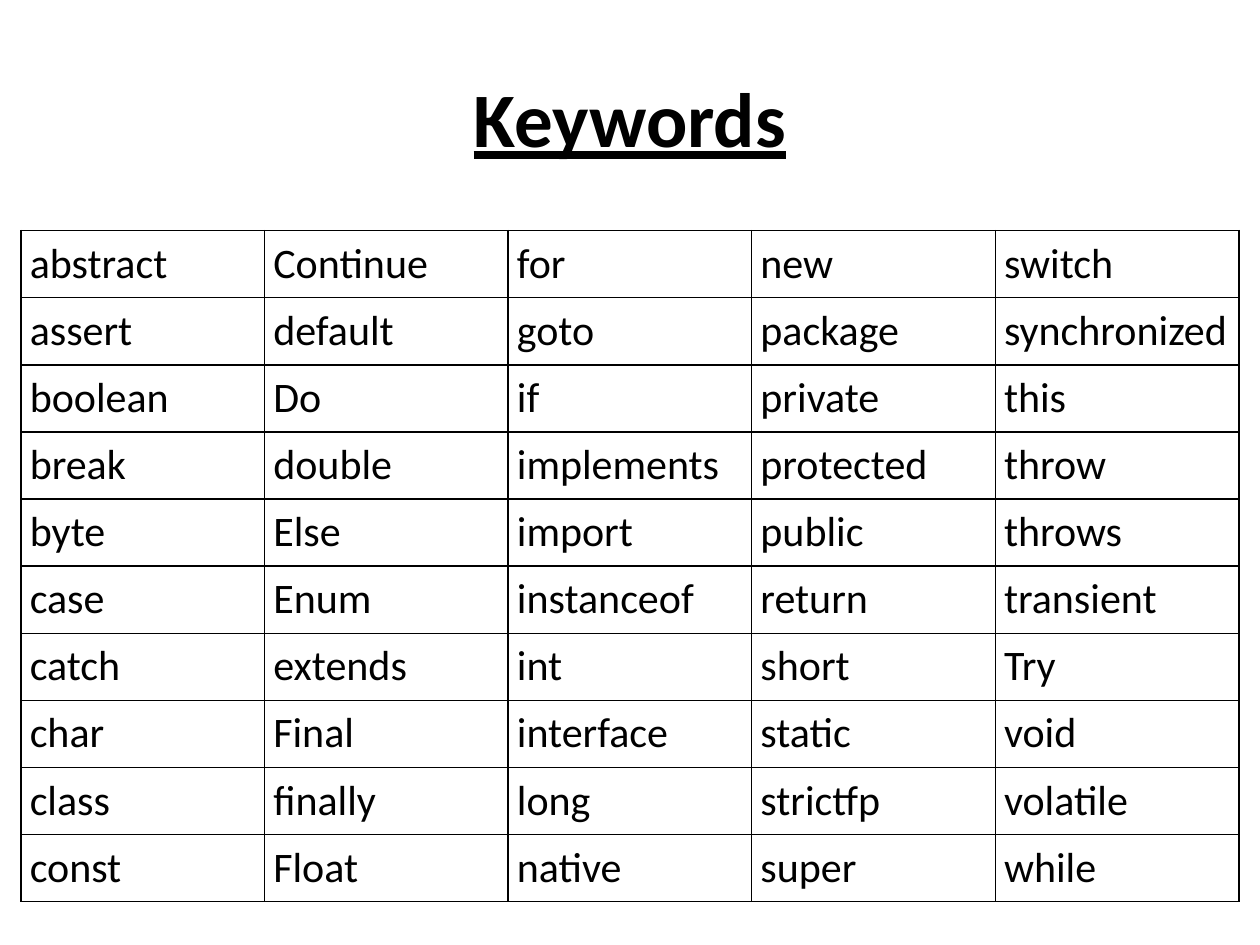
from lxml.etree import SubElement
from pptx import Presentation
from pptx.dml.color import RGBColor
from pptx.enum.text import MSO_ANCHOR, PP_ALIGN
from pptx.oxml.ns import qn
from pptx.util import Inches, Pt

INK = "000000"
KEYWORDS = """
abstract Continue for new switch
assert default goto package synchronized
boolean Do if private this
break double implements protected throw
byte Else import public throws
case Enum instanceof return transient
catch extends int short Try
char Final interface static void
class finally long strictfp volatile
const Float native super while
"""


def add_span(para, text, size, color=INK):
    span = para.add_run()
    span.text = text
    span.font.name = "Calibri"
    span.font.size = Pt(size)
    span.font.color.rgb = RGBColor.from_string(color)
    return span


def add_borders(cell, color=INK, width=1):
    props = cell._tc.get_or_add_tcPr()
    for side in ("lnL", "lnR", "lnT", "lnB"):
        line = SubElement(props, qn(f"a:{side}"), w=str(Pt(width)))
        fill = SubElement(line, qn("a:solidFill"))
        SubElement(fill, qn("a:srgbClr"), val=color)


# Deck and page
deck = Presentation()
deck.slide_width, deck.slide_height = Inches(10), Inches(7.5)
page = deck.slides.add_slide(deck.slide_layouts[5])

# Title
title = page.shapes.title
title.left, title.top = Inches(0.5), Inches(0.3)
title.width, title.height = Inches(9), Inches(1.25)
title.text_frame.vertical_anchor = MSO_ANCHOR.MIDDLE
heading = title.text_frame.paragraphs[0]
heading.alignment = PP_ALIGN.CENTER
span = add_span(heading, "Keywords", 44)
span.font.bold = True
span.font.underline = True

# Keyword table: equal columns and rows
rows = [line.split() for line in KEYWORDS.strip().splitlines()]
margin = Inches(1 / 6)
frame = page.shapes.add_table(
    len(rows), len(rows[0]), margin, Inches(1.83),
    deck.slide_width - 2 * margin, Inches(5.33))
table = frame.table
table.first_row = False
table.horz_banding = False

for r, words in enumerate(rows):
    for c, word in enumerate(words):
        cell = table.cell(r, c)
        cell.margin_left = cell.margin_right = Inches(0.07)
        cell.margin_top = cell.margin_bottom = 0
        cell.vertical_anchor = MSO_ANCHOR.TOP
        add_borders(cell)
        cell.fill.background()
        para = cell.text_frame.paragraphs[0]
        para.line_spacing = 1.15
        add_span(para, word, 24)

deck.save("out.pptx")
